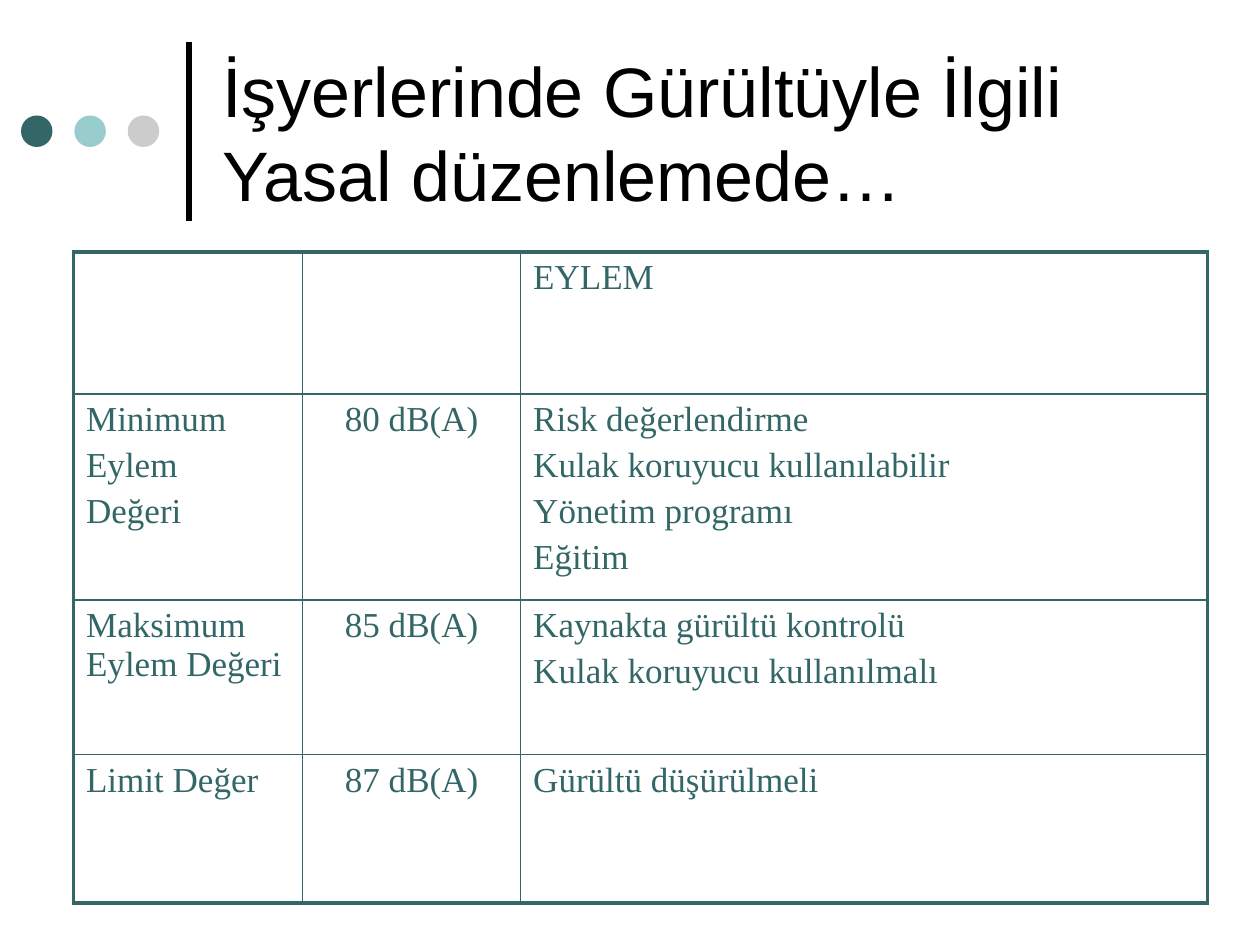
"""Build the slide on legal noise limits in workplaces."""
from dataclasses import dataclass

from lxml.etree import SubElement
from pptx import Presentation
from pptx.dml.color import RGBColor
from pptx.enum.shapes import MSO_CONNECTOR, MSO_SHAPE
from pptx.enum.text import MSO_ANCHOR, PP_ALIGN
from pptx.oxml import parse_xml
from pptx.oxml.ns import nsdecls, qn
from pptx.util import Pt


@dataclass(frozen=True)
class Theme:
    ink: str = "000000"
    teal: str = "336666"
    aqua: str = "99CCCC"
    gray: str = "CCCCCC"
    head: str = "Arial"
    body: str = "Times New Roman"
    big: int = 40
    small: int = 20
    thick: float = 2.25
    thin: float = 1


THEME = Theme()
COLS = (131, 124.5, 392.5)
ROWS = (81.25, 117.5, 88.5, 84.75)
CELLS = (
    ((), (), ("EYLEM",)),
    (("Minimum", "Eylem", "Değeri"), ("80 dB(A)",),
     ("Risk değerlendirme", "Kulak koruyucu kullanılabilir",
      "Yönetim programı", "Eğitim")),
    (("Maksimum Eylem Değeri",), ("85 dB(A)",),
     ("Kaynakta gürültü kontrolü", "Kulak koruyucu kullanılmalı")),
    (("Limit Değer",), ("87 dB(A)",), ("Gürültü düşürülmeli",)),
)


def set_font(para, name, size, color):
    para.font.name = name
    para.font.size = Pt(size)
    para.font.color.rgb = RGBColor.from_string(color)


def add_title(slide, text):
    box = slide.shapes.add_textbox(Pt(120), Pt(15), Pt(552), Pt(120))
    frame = box.text_frame
    frame.word_wrap = True
    frame.vertical_anchor = MSO_ANCHOR.MIDDLE
    frame.text = text
    set_font(frame.paragraphs[0], THEME.head, THEME.big, THEME.ink)


def add_rule(slide):
    rule = slide.shapes.add_connector(
        MSO_CONNECTOR.STRAIGHT, Pt(108), Pt(126), Pt(108), Pt(24))
    rule.line.color.rgb = RGBColor.from_string(THEME.ink)
    rule.line.width = Pt(3)
    SubElement(rule._element.spPr, qn("a:effectLst"))


def add_dots(slide):
    for i, color in enumerate((THEME.teal, THEME.aqua, THEME.gray)):
        dot = slide.shapes.add_shape(
            MSO_SHAPE.OVAL, Pt(12 + 30.5 * i), Pt(66), Pt(18), Pt(18))
        dot.shadow.inherit = False
        dot.fill.solid()
        dot.fill.fore_color.rgb = RGBColor.from_string(color)
        dot.line.fill.background()


def set_edges(cell, row, col):
    outer = {"L": col == 0, "R": col == len(COLS) - 1,
             "T": row == 0, "B": row == len(ROWS) - 1}
    props = cell._tc.get_or_add_tcPr()
    for i, (side, edge) in enumerate(outer.items()):
        width = Pt(THEME.thick if edge else THEME.thin)
        props.insert(i, parse_xml(
            f'<a:ln{side} {nsdecls("a")} w="{width}"><a:solidFill>'
            f'<a:srgbClr val="{THEME.teal}"/></a:solidFill></a:ln{side}>'))


def fill_cell(cell, lines, align):
    cell.text = "\n".join(lines)
    for i, para in enumerate(cell.text_frame.paragraphs):
        para.alignment = align
        para.space_before = Pt(THEME.small * 0.2 if i else 0)
        set_font(para, THEME.body, THEME.small, THEME.teal)


def add_grid(slide):
    grid = slide.shapes.add_table(
        len(ROWS), len(COLS), Pt(42), Pt(144),
        Pt(sum(COLS)), Pt(sum(ROWS))).table
    grid.first_row = grid.horz_banding = False
    for col, width in zip(grid.columns, COLS):
        col.width = Pt(width)
    for row, height in zip(grid.rows, ROWS):
        row.height = Pt(height)
    for r, row in enumerate(CELLS):
        for c, lines in enumerate(row):
            cell = grid.cell(r, c)
            cell.fill.background()
            set_edges(cell, r, c)
            fill_cell(cell, lines, PP_ALIGN.CENTER if c == 1 else PP_ALIGN.LEFT)


def main():
    deck = Presentation()
    deck.slide_width, deck.slide_height = Pt(720), Pt(540)
    slide = deck.slides.add_slide(deck.slide_layouts[6])
    add_rule(slide)
    add_dots(slide)
    add_grid(slide)
    add_title(slide, "İşyerlerinde Gürültüyle İlgili Yasal düzenlemede…")
    deck.save("out.pptx")


if __name__ == "__main__":
    main()
